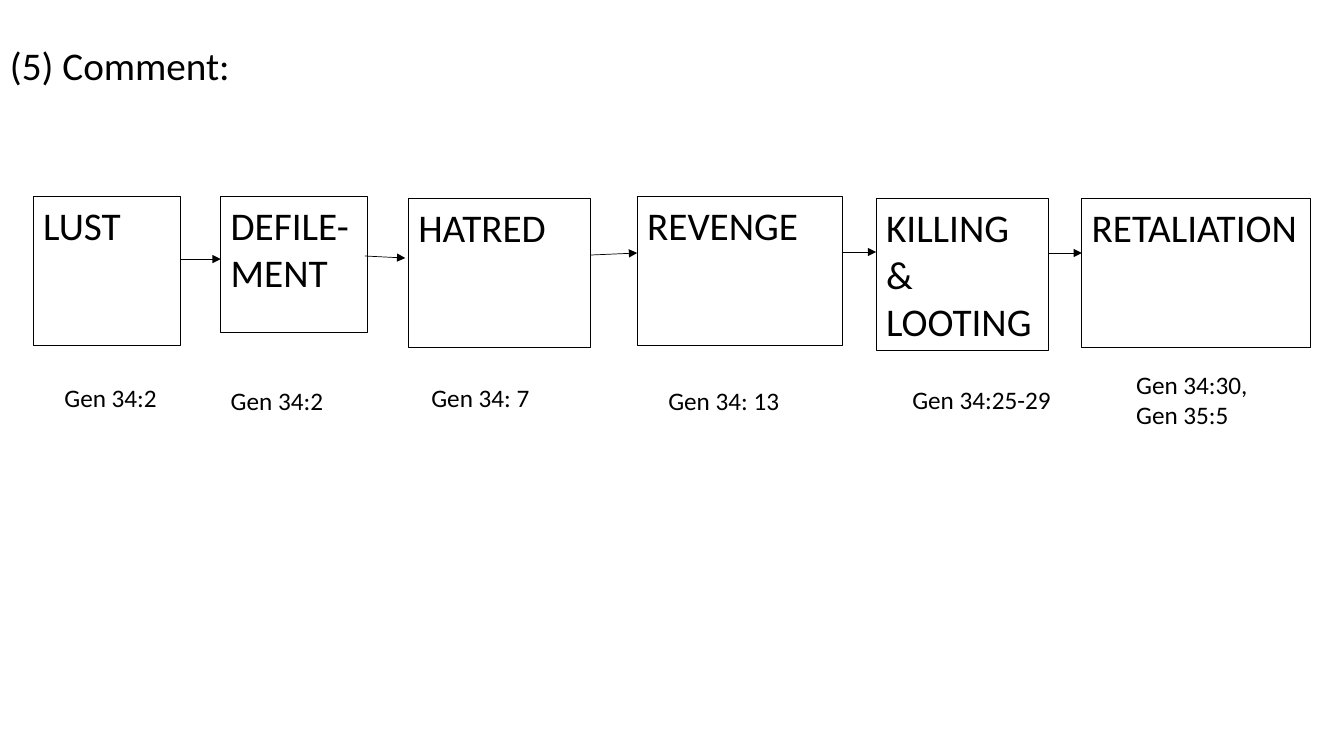
from lxml.etree import SubElement
from pptx import Presentation
from pptx.dml.color import RGBColor
from pptx.enum.shapes import MSO_CONNECTOR, MSO_SHAPE
from pptx.enum.text import MSO_ANCHOR, PP_ALIGN
from pptx.oxml.ns import qn
from pptx.util import Pt

# Content: lengths in px, 100 px to the inch
PX = 9144
SLIDE_SIZE = (1333, 750)
FONT = "Calibri"
COLORS = {"ink": "000000", "background": "FFFFFF"}

TITLE = ("(5) Comment:", (0, 36, 1333, 88))

# Stage, its box, verse, verse box (left, top, width, height)
STAGES = [
    ("LUST", (33, 195, 146, 148), "Gen 34:2", (54, 374, 132, 40)),
    ("DEFILE-MENT", (219, 195, 146, 135), "Gen 34:2", (219, 377, 132, 40)),
    ("HATRED", (405, 197, 181, 148), "Gen 34: 7", (418, 374, 239, 40)),
    ("REVENGE", (632, 195, 204, 148), "Gen 34: 13", (653, 377, 239, 40)),
    ("KILLING & LOOTING", (869, 197, 171, 151), "Gen 34:25-29", (895, 376, 162, 40)),
    ("RETALIATION", (1073, 197, 227, 148), "Gen 34:30, Gen 35:5", (1117, 361, 162, 71)),
]

# Arrow to the next stage: start height, end height, sideways shift
ARROWS = [(257, 257, 0), (254, 256, -3), (253, 251, 0), (250, 250, 0), (251, 251, 0)]


def emu(*lengths):
    return [length * PX for length in lengths]


def color(name):
    return RGBColor.from_string(COLORS[name])


def write_text(shape, text, size=18):
    frame = shape.text_frame
    frame.word_wrap = True
    frame.vertical_anchor = MSO_ANCHOR.TOP
    paragraph = frame.paragraphs[0]
    paragraph.alignment = PP_ALIGN.LEFT
    run = paragraph.add_run()
    run.text = text
    run.font.name = FONT
    run.font.size = Pt(size)
    run.font.color.rgb = color("ink")


def add_text(slide, text, box, **text_format):
    write_text(slide.shapes.add_textbox(*emu(*box)), text, **text_format)


def add_stage(slide, text, box):
    shape = slide.shapes.add_shape(MSO_SHAPE.RECTANGLE, *emu(*box))
    shape.shadow.inherit = False
    shape.fill.background()
    shape.line.color.rgb = color("ink")
    shape.line.width = Pt(0.75)
    write_text(shape, text, size=28)


def add_arrow(slide, start, end):
    arrow = slide.shapes.add_connector(MSO_CONNECTOR.STRAIGHT, *emu(*start, *end))
    arrow.line.color.rgb = color("ink")
    arrow.line.width = Pt(0.5)
    SubElement(arrow.line._get_or_add_ln(), qn("a:tailEnd"), type="triangle")
    SubElement(arrow._element.spPr, qn("a:effectLst"))


def main():
    presentation = Presentation()
    presentation.slide_width, presentation.slide_height = emu(*SLIDE_SIZE)
    slide = presentation.slides.add_slide(presentation.slide_layouts[6])
    slide.background.fill.solid()
    slide.background.fill.fore_color.rgb = color("background")

    # Title
    title, title_box = TITLE
    add_text(slide, title, title_box, size=28)

    # Stages with their verses
    for stage, box, verse, verse_box in STAGES:
        add_stage(slide, stage, box)
        add_text(slide, verse, verse_box)

    # Arrows from each right edge to the next left edge
    boxes = [box for _, box, _, _ in STAGES]
    for box, next_box, (start_y, end_y, shift) in zip(boxes, boxes[1:], ARROWS):
        right_edge = box[0] + box[2]
        add_arrow(slide, (right_edge + shift, start_y), (next_box[0] + shift, end_y))

    presentation.save("out.pptx")


if __name__ == "__main__":
    main()
